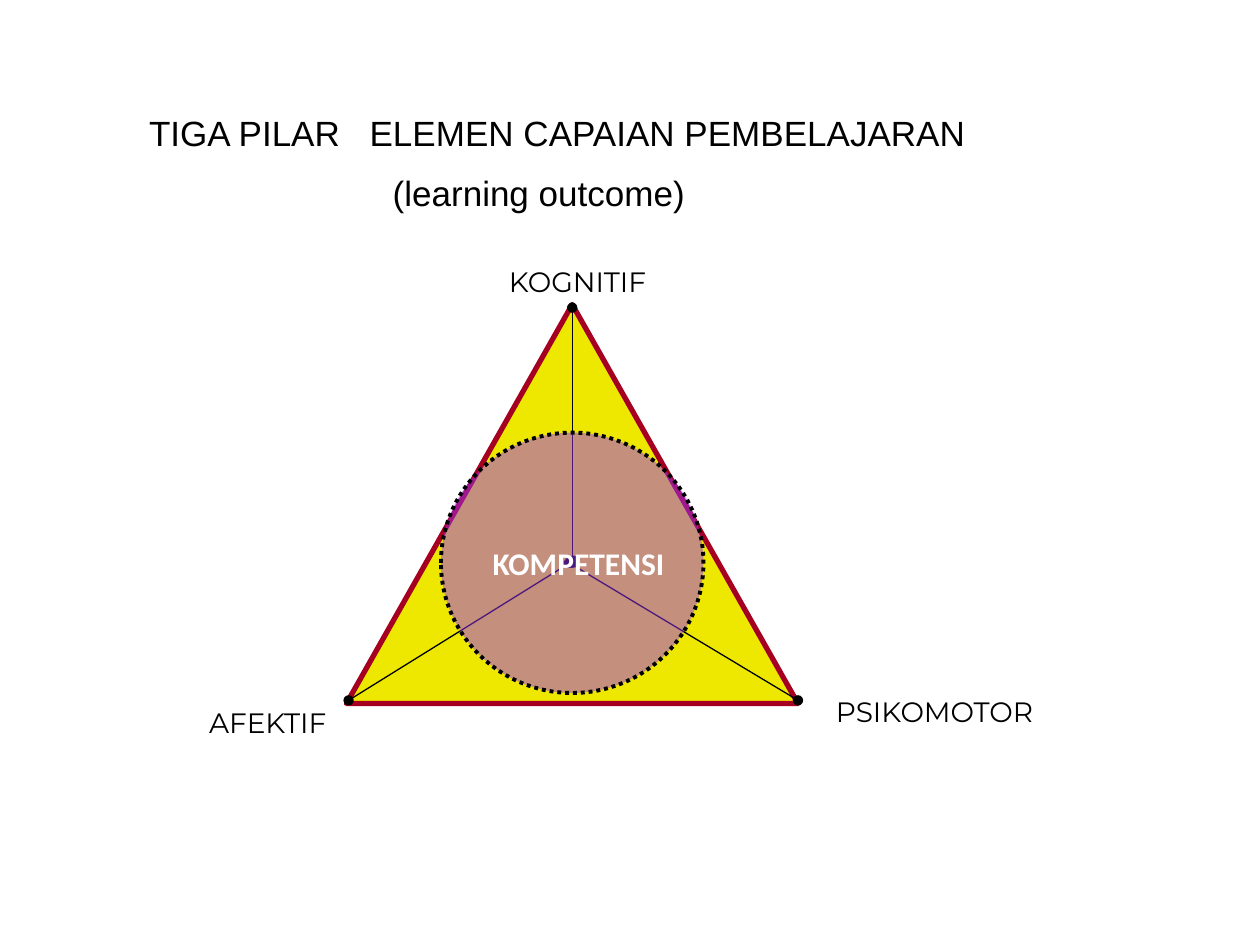
from lxml import etree
from pptx import Presentation
from pptx import util as u
from pptx.dml.color import RGBColor
from pptx.enum import dml, shapes, text
from pptx.oxml import ns

COLORS = {
    "black": "000000",
    "white": "FFFFFF",
    "triangle": "EEE800",
    "border": "A50021",
    "circle": "9933FF",
}
SLIDE_WIDTH, SLIDE_HEIGHT = u.Inches(10), u.Inches(7.5)
COLUMNS, ROWS = 120, 90
LABEL = {"name": "Montserrat", "size": u.Pt(16), "bold": False}
CENTER_LABEL = {"name": "Calibri", "size": u.Pt(18), "bold": True}
TITLE = {"name": "Arial", "size": u.Pt(20), "bold": False}


def column(value):
    return int(SLIDE_WIDTH * value / COLUMNS)


def row(value):
    return int(SLIDE_HEIGHT * value / ROWS)


def place(left, top, width, height):
    return column(left), row(top), column(width), row(height)


def color(name):
    return RGBColor.from_string(COLORS[name])


def apply_format(target, values):
    for name, value in values.items():
        setattr(target, name, value)


def add_element(parent, tag, **attributes):
    return etree.SubElement(parent, ns.qn(tag), attributes)


def write(paragraph, content, font, color_name, alignment):
    paragraph.alignment = alignment
    run = paragraph.add_run()
    run.text = content
    apply_format(run.font, font)
    run.font.color.rgb = color(color_name)


def add_title(slide):
    title = slide.shapes.title
    left, top, width, height = place(13, 10, 87, 11.3)
    apply_format(title, {"left": left, "top": top, "width": width, "height": height})
    frame = title.text_frame
    apply_format(frame, {
        "word_wrap": True,
        "auto_size": text.MSO_AUTO_SIZE.NONE,
        "vertical_anchor": text.MSO_ANCHOR.TOP,
    })
    heading, subtitle = frame.paragraphs[0], frame.add_paragraph()
    write(heading, "TIGA PILAR\tELEMEN CAPAIAN PEMBELAJARAN", TITLE, "black", text.PP_ALIGN.LEFT)
    write(subtitle, "(learning outcome)", TITLE, "black", text.PP_ALIGN.LEFT)
    tabs = add_element(heading._p.get_or_add_pPr(), "a:tabLst")
    add_element(tabs, "a:tab", pos=str(column(21)), algn="l")
    subtitle.space_before = u.Pt(10.5)
    subtitle._p.get_or_add_pPr().set("marL", str(column(23.2)))


def add_label(slide, content, box, font=LABEL, color_name="black"):
    frame = slide.shapes.add_textbox(*place(*box)).text_frame
    frame.word_wrap = True
    write(frame.paragraphs[0], content, font, color_name, text.PP_ALIGN.CENTER)


def add_figure(parent, kind, box, fill, line, line_width):
    figure = parent.shapes.add_shape(kind, *place(*box))
    figure.shadow.inherit = False
    figure.fill.solid()
    figure.fill.fore_color.rgb = color(fill)
    figure.line.color.rgb = color(line)
    figure.line.width = u.Pt(line_width)
    return figure


def add_spoke(parent, start, end):
    spoke = parent.shapes.add_connector(
        shapes.MSO_CONNECTOR.STRAIGHT,
        column(start[0]), row(start[1]), column(end[0]), row(end[1]))
    spoke.line.color.rgb = color("black")
    spoke.line.width = u.Pt(0.75)
    for tag in ("a:headEnd", "a:tailEnd"):
        add_element(spoke.line._get_or_add_ln(), tag, type="oval")
    add_element(spoke._element.spPr, "a:effectLst")


def add_pillars(slide):
    group = slide.shapes.add_group_shape()
    add_figure(group, shapes.MSO_SHAPE.ISOSCELES_TRIANGLE, (33, 29, 43, 38), "triangle", "border", 3)
    add_spoke(group, (33.2, 66.7), (54.6, 53.4))
    add_spoke(group, (54.2, 53.6), (76, 66.7))
    add_spoke(group, (54.5, 29.3), (54.5, 53.6))


def add_competence_circle(slide):
    circle = add_figure(slide, shapes.MSO_SHAPE.OVAL, (42, 41.2, 25, 24.8), "circle", "black", 2.25)
    circle.line.dash_style = dml.MSO_LINE.ROUND_DOT
    fill_color = circle._element.spPr.find(ns.qn("a:solidFill"))[0]
    add_element(fill_color, "a:alpha", val="49000")


def main():
    presentation = Presentation()
    apply_format(presentation, {"slide_width": SLIDE_WIDTH, "slide_height": SLIDE_HEIGHT})
    slide = presentation.slides.add_slide(presentation.slide_layouts[5])
    add_pillars(slide)
    add_label(slide, "KOGNITIF", (44, 24.6, 22, 4.4))
    add_label(slide, "PSIKOMOTOR", (75, 65.6, 28, 4.4))
    add_label(slide, "AFEKTIF", (15, 66.6, 21, 4.4))
    add_competence_circle(slide)
    add_label(slide, "KOMPETENSI", (44, 51.2, 22.2, 4.8), CENTER_LABEL, "white")
    add_title(slide)
    presentation.save("out.pptx")


if __name__ == "__main__":
    main()
